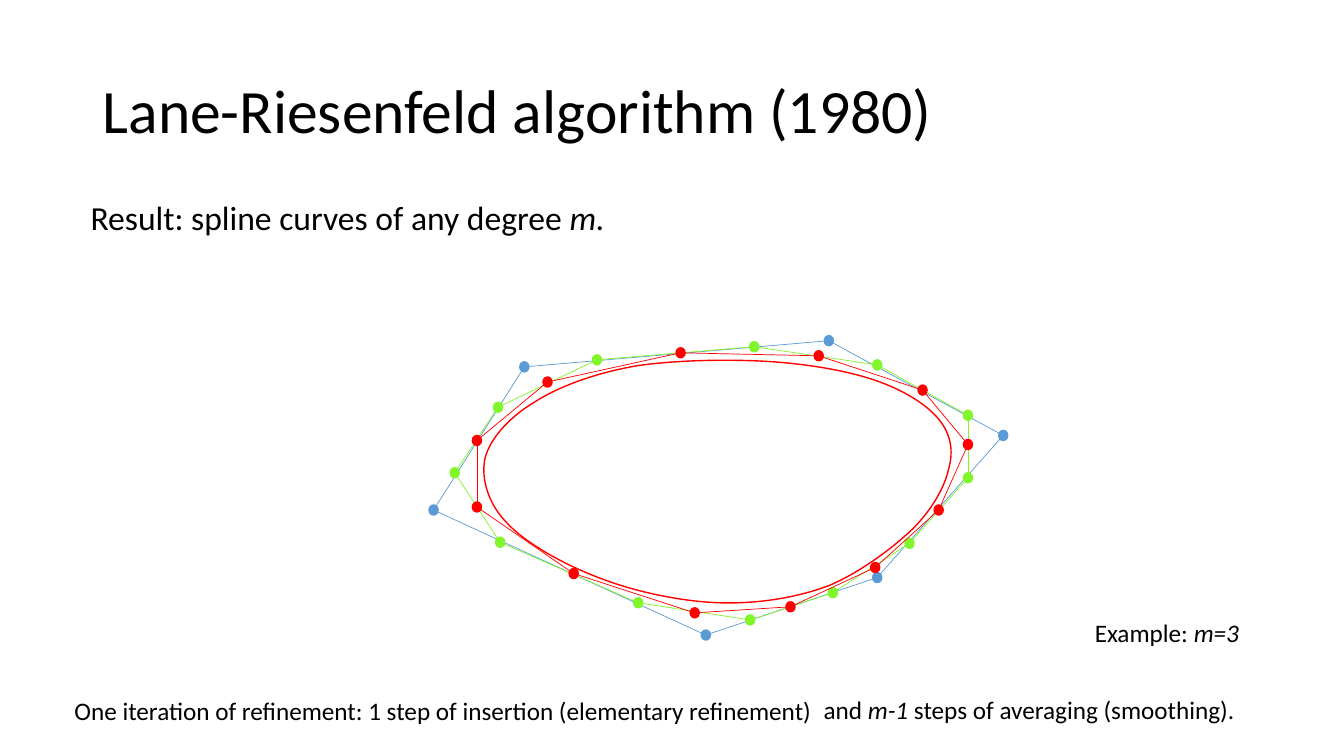
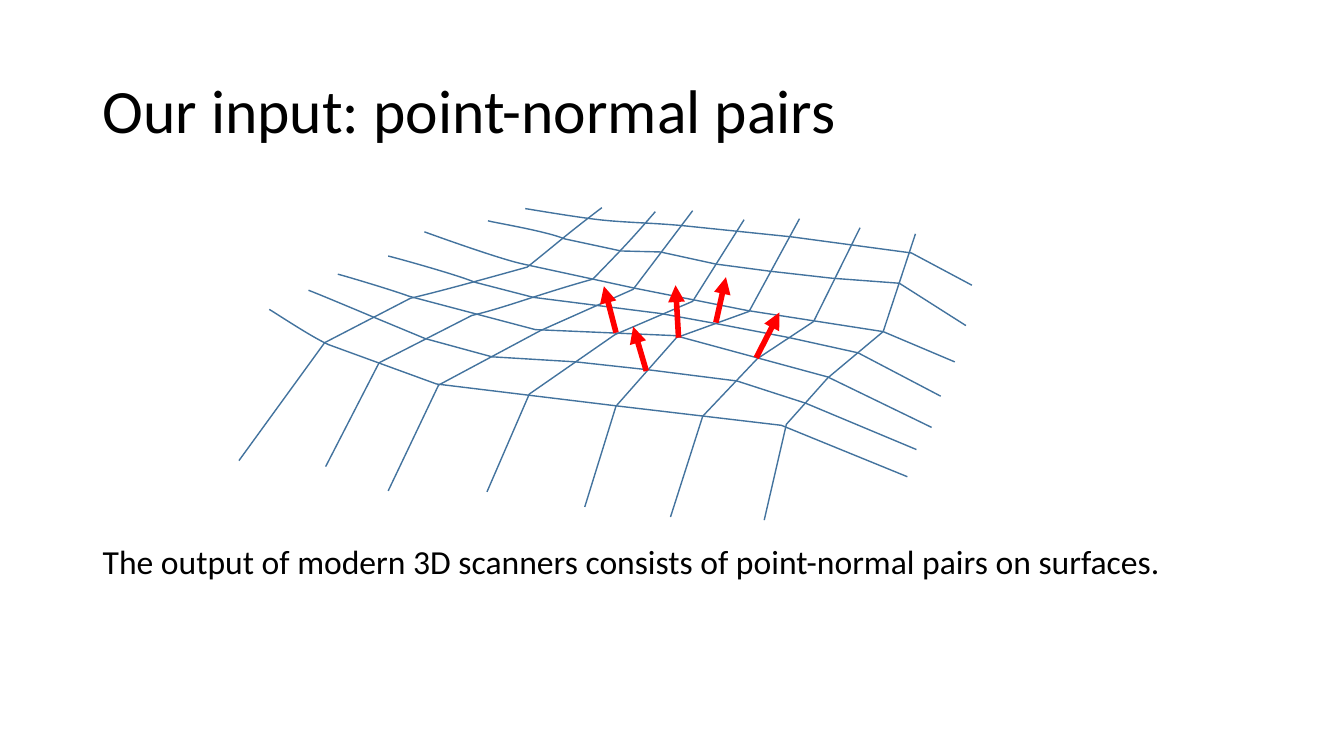
from pptx import Presentation
from pptx.dml.color import RGBColor
from pptx.enum.shapes import MSO_CONNECTOR, MSO_SHAPE
from pptx.enum.text import MSO_ANCHOR
from pptx.oxml.ns import qn
from pptx.util import Inches, Pt
from lxml import etree

FONT = "Calibri"
COLORS = {"text": "000000", "control": "5B9BD5", "inserted": "81F62A",
          "averaged": "FF0000", "mesh": "43739E", "normal": "FF0000"}
DOT_W, DOT_H = 0.09, 0.1

# Polygon vertices (dot centres), in order around the curve
POLYGONS = {
    "control": [(4.3, 5.06), (5.2, 3.64), (8.22, 3.38), (9.95, 4.32), (8.7, 5.73),
                (7, 6.3)],
    "inserted": [(4.94, 4.04), (4.51, 4.69), (4.96, 5.38), (6.33, 5.98), (7.44, 6.15),
                 (8.26, 5.88), (9.02, 5.39), (9.6, 4.74), (9.6, 4.12), (8.7, 3.62),
                 (7.48, 3.44), (5.92, 3.57)],
    "averaged": [(4.73, 4.37), (4.73, 5.03), (5.69, 5.69), (6.89, 6.08), (7.84, 6.02),
                 (8.68, 5.63), (9.31, 5.06), (9.6, 4.41), (9.15, 3.87), (8.12, 3.53),
                 (6.75, 3.5), (5.43, 3.79)],
}

# A path is a start point, then 2 numbers for a line or 6 for a cubic curve
LIMIT_CURVE = [
    (4.81, 4.55), (4.77, 4.75, 4.84, 5, 5.04, 5.2), (5.23, 5.4, 5.63, 5.62, 5.99, 5.75),
    (6.34, 5.88, 6.78, 5.97, 7.15, 5.98), (7.52, 5.99, 7.9, 5.93, 8.22, 5.81),
    (8.53, 5.68, 8.85, 5.44, 9.05, 5.25), (9.25, 5.05, 9.37, 4.83, 9.41, 4.65),
    (9.46, 4.47, 9.43, 4.31, 9.32, 4.17), (9.21, 4.03, 9, 3.89, 8.73, 3.79),
    (8.46, 3.69, 8.08, 3.62, 7.68, 3.59), (7.27, 3.56, 6.7, 3.57, 6.31, 3.63),
    (5.91, 3.7, 5.55, 3.83, 5.3, 3.99), (5.05, 4.14, 4.86, 4.35, 4.81, 4.55)]

MESH = [
    # Front to back
    [(2.37, 4.57), (3.22, 3.4), (4.07, 2.96), (4.4, 2.88, 4.69, 2.8, 5.23, 2.65),
     (5.58, 2.37, 5.59, 2.35, 5.97, 2.06)],
    [(3.23, 4.63), (3.76, 3.6), (4.68, 3.13), (5.02, 3.05, 5.34, 2.92, 5.88, 2.77),
     (6.2, 2.44, 6.24, 2.4, 6.5, 2.1)],
    [(3.85, 4.87), (4.35, 3.82), (5.36, 3.28), (6.28, 2.87), (6.87, 2.09)],
    [(4.83, 4.88), (5.25, 3.91), (6.1, 3.32), (6.87, 2.99), (7.38, 2.18)],
    [(5.8, 5.03), (6.11, 4.03), (6.71, 3.35), (7.43, 3.09), (7.93, 2.17)],
    [(6.65, 5.13), (6.97, 4.13), (7.51, 3.56), (8.07, 3.19), (8.53, 2.26)],
    [(7.58, 5.16), (7.8, 4.21), (8.21, 3.75), (8.76, 3.29), (9.08, 2.32)],
    # Right to left
    [(9, 4.73), (7.75, 4.22), (6.14, 4.03), (4.33, 3.81), (3.26, 3.42),
     (3.08, 3.34, 2.68, 3.07, 2.67, 3.07)],
    [(9.09, 4.46), (7.99, 4), (7.31, 3.78), (6.44, 3.67), (5.71, 3.59), (4.88, 3.54),
     (4.22, 3.36), (3.69, 3.14), (3.5, 3.06, 3.07, 2.88, 3.06, 2.88)],
    [(9.24, 4.24), (8.21, 3.74), (6.7, 3.33), (5.31, 3.27), (4.06, 2.94),
     (3.87, 2.87, 3.36, 2.72, 3.35, 2.72)],
    [(9.33, 3.93), (8.51, 3.5), (7.83, 3.35), (7.1, 3.21), (6.55, 3.11), (5.92, 3.03),
     (5.29, 2.95), (4.71, 2.8), (4.52, 2.72, 3.86, 2.54, 3.85, 2.54)],
    [(9.47, 3.59), (8.76, 3.29), (7.41, 3.08), (6.3, 2.86), (5.19, 2.62),
     (4.95, 2.57, 4.21, 2.3, 4.21, 2.3)],
    [(9.58, 3.23), (8.92, 2.81), (8.25, 2.76), (7.63, 2.69), (7.1, 2.62), (6.55, 2.5),
     (6.16, 2.49), (5.6, 2.37), (5.41, 2.29, 4.85, 2.2, 4.84, 2.19)],
    [(9.64, 2.83), (9.04, 2.51), (7.85, 2.35), (6.78, 2.24),
     (6.46, 2.21, 6.21, 2.21, 5.94, 2.18), (5.68, 2.15, 5.22, 2.07, 5.21, 2.07)],
]

NORMALS = [((6.73, 3.35), (6.7, 2.83)), ((7.5, 3.55), (7.73, 3.1)),
           ((6.11, 3.3), (5.99, 2.84)), ((7.1, 3.2), (7.2, 2.75)),
           ((6.41, 3.68), (6.28, 3.24))]


def rgb(name):
    return RGBColor.from_string(COLORS[name])


def add_text(s, x, y, w, h, runs, size):
    """Add one paragraph; runs are (text, italic) pairs."""
    tf = s.shapes.add_textbox(Inches(x), Inches(y), Inches(w), Inches(h)).text_frame
    tf.word_wrap = True
    p = tf.paragraphs[0]
    p.font.name, p.font.size = FONT, Pt(size)
    p.font.color.rgb = rgb("text")
    for text, italic in runs:
        r = p.add_run()
        r.text = text
        if italic:
            r.font.italic = True
    return tf


def add_titled_slide(prs, title):
    s = prs.slides.add_slide(prs.slide_layouts[6])
    tf = add_text(s, 0.92, 0.4, 11.5, 1.45, [(title, False)], 44)
    tf.vertical_anchor = MSO_ANCHOR.MIDDLE
    tf.paragraphs[0].line_spacing = 0.9
    return s


def add_line(s, start, end, color, width, arrow=False):
    c = s.shapes.add_connector(MSO_CONNECTOR.STRAIGHT,
                               *(Inches(v) for v in (*start, *end)))
    c.line.color.rgb = rgb(color)
    c.line.width = Pt(width)
    if arrow:
        ln = c.line._get_or_add_ln()
        etree.SubElement(ln, qn("a:tailEnd"), type="triangle")
    etree.SubElement(c._element.spPr, qn("a:effectLst"))


def add_dot(s, center, color):
    x, y = center
    sp = s.shapes.add_shape(MSO_SHAPE.OVAL, Inches(x - DOT_W / 2), Inches(y - DOT_H / 2),
                            Inches(DOT_W), Inches(DOT_H))
    sp.shadow.inherit = False
    sp.fill.solid()
    sp.fill.fore_color.rgb = rgb(color)
    sp.line.color.rgb = rgb(color)
    sp.line.width = Pt(1)


def add_polygon(s, points, color):
    for start, end in zip(points, points[1:] + points[:1]):
        add_line(s, start, end, color, 0.5)
    for point in points:
        add_dot(s, point, color)


def bend_segments(sp, segments):
    """Turn the straight pieces that have control points into cubic curves."""
    pieces = list(sp._element.iter(qn("a:lnTo")))
    for piece, seg in zip(pieces, segments[1:]):
        if len(seg) == 6:
            curve = etree.Element(qn("a:cubicBezTo"))
            for x, y in zip(seg[::2], seg[1::2]):
                etree.SubElement(curve, qn("a:pt"), x=str(Inches(x) - sp.left),
                                 y=str(Inches(y) - sp.top))
            piece.getparent().replace(piece, curve)


def add_path(s, segments, color, close=False):
    points = [(Inches(seg[-2]), Inches(seg[-1])) for seg in segments]
    fb = s.shapes.build_freeform(*points[0])
    fb.add_line_segments(points[1:], close=close)
    sp = fb.convert_to_shape()
    bend_segments(sp, segments)
    sp.shadow.inherit = False
    sp.fill.background()
    sp.line.color.rgb = rgb(color)
    sp.line.width = Pt(1)


def build_algorithm(prs):
    s = add_titled_slide(prs, "Lane-Riesenfeld algorithm (1980)")
    add_text(s, 0.8, 1.9, 5.6, 0.5,
             [("Result: spline curves of any degree ", False), ("m.", True)], 24)
    # Successive refinements and their limit
    for color, points in POLYGONS.items():
        add_polygon(s, points, color)
    add_path(s, LIMIT_CURVE, "averaged", close=True)
    # Captions
    add_text(s, 10.76, 6.08, 1.8, 0.4, [("Example: ", False), ("m=3", True)], 18)
    add_text(s, 0.64, 6.85, 7.63, 0.4,
             [("One iteration of refinement: 1 step of insertion (elementary refinement)",
               False)], 18)
    add_text(s, 8.07, 6.84, 4.6, 0.4,
             [("and ", False), ("m-1", True),
              (" steps of averaging (smoothing).", False)], 18)


def build_input(prs):
    s = add_titled_slide(prs, "Our input: point-normal pairs")
    add_text(s, 0.92, 5.32, 11.2, 0.5,
             [("The output of modern 3D scanners consists of point-normal pairs "
               "on surfaces.", False)], 24)
    # Surface mesh and its normals
    for segments in MESH:
        add_path(s, segments, "mesh")
    for start, end in NORMALS:
        add_line(s, start, end, "normal", 4, arrow=True)


def main():
    prs = Presentation()
    prs.slide_width, prs.slide_height = Inches(13.33), Inches(7.5)
    build_algorithm(prs)
    build_input(prs)
    prs.save("out.pptx")


if __name__ == "__main__":
    main()
